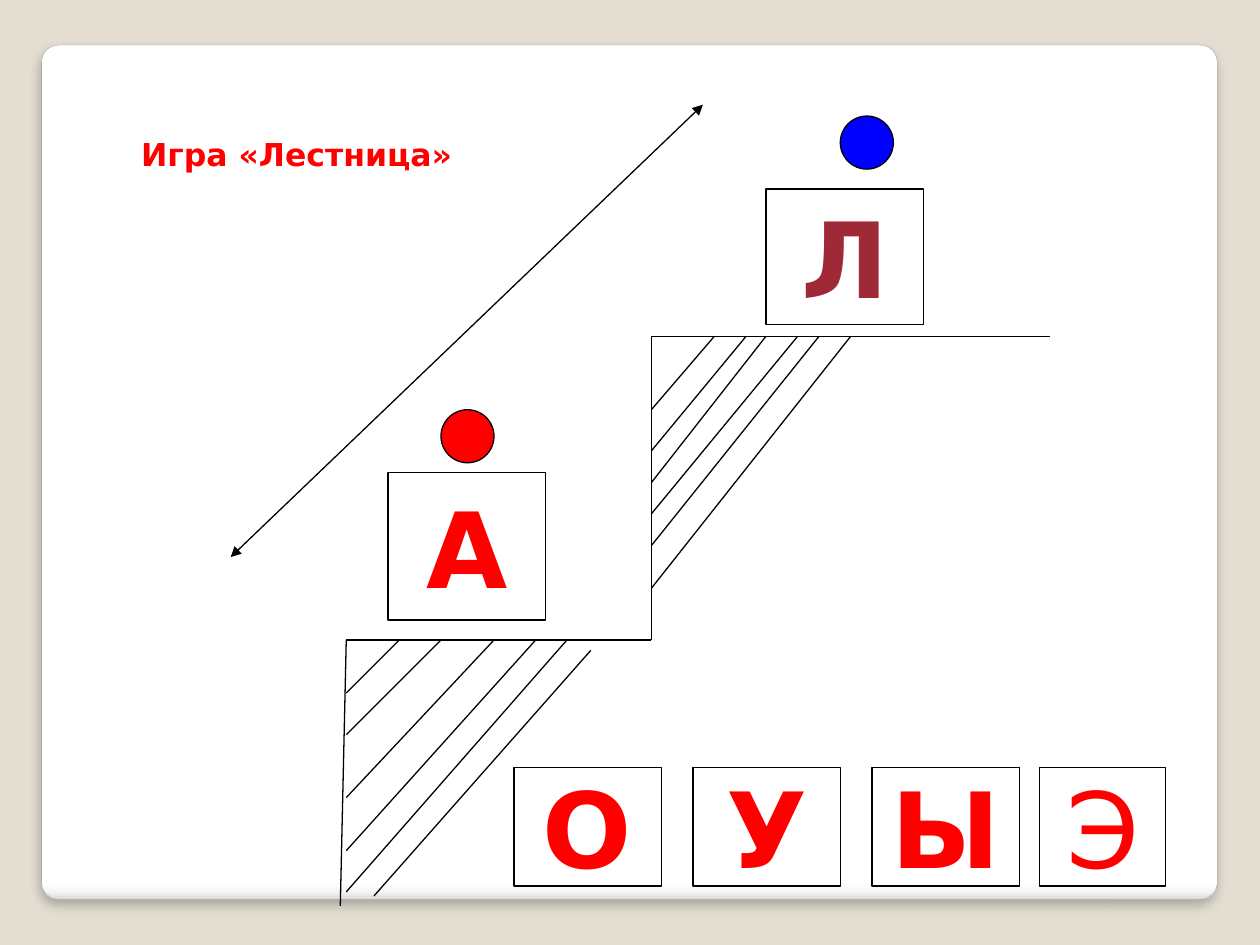
from lxml.etree import SubElement
from pptx import Presentation
from pptx.dml.color import RGBColor
from pptx.enum.shapes import MSO_CONNECTOR, MSO_SHAPE
from pptx.enum.text import MSO_ANCHOR, MSO_AUTO_SIZE, PP_ALIGN
from pptx.oxml.ns import qn
from pptx.util import Cm, Pt

COLORS = {
    "backdrop": "E3DED1", "white": "FFFFFF", "black": "000000",
    "edge": "A4A4A4", "red": "FF0000", "blue": "0000FF", "maroon": "9F2936",
}
PANEL_STOPS = [(0, "FFFFFF"), (98, "FFFFFF"), (99, "F7F7F7"), (100, "DADADA")]
FONT = "DejaVu Sans"

LOW_X, HIGH_X, END_X = 6.98, 13.13, 21.16
LOW_Y, HIGH_Y = 12.9, 6.78
# Each hatch line joins a point on the tread (x) to one on the riser (y).
LOW_HATCH = [(8.05, 13.97), (8.89, 14.81), (9.96, 16.08), (10.8, 17.15), (11.43, 17.98)]
HIGH_HATCH = [(14.4, 8.26), (15.04, 9.09), (15.44, 9.73), (16.08, 10.36),
              (16.51, 11), (17.15, 11.86)]


def rgb(name):
    return RGBColor.from_string(COLORS[name])


def add_outlined(slide, preset, box, fill="white", edge="black", width=0.75):
    shape = slide.shapes.add_shape(preset, *map(Cm, box))
    shape.shadow.inherit = False
    shape.fill.solid()
    shape.fill.fore_color.rgb = rgb(fill)
    shape.line.color.rgb = rgb(edge)
    shape.line.width = Pt(width)
    return shape


def add_panel(slide):
    """Rounded white sheet with a darkening lower rim and a soft shadow."""
    panel = add_outlined(slide, MSO_SHAPE.ROUNDED_RECTANGLE,
                         (0.84, 0.91, 23.7, 17.22), edge="edge", width=0.16)
    panel.adjustments[0] = 0.02
    panel.fill.gradient()
    properties = panel._element.spPr
    stops = properties.find(".//" + qn("a:gsLst"))
    for stop in list(stops):
        stops.remove(stop)
    for percent, color in PANEL_STOPS:
        stop = SubElement(stops, qn("a:gs"), pos=str(percent * 1000))
        SubElement(stop, qn("a:srgbClr"), val=color)
    properties.find(".//" + qn("a:lin")).set("ang", "5400000")
    shadow = SubElement(properties.find(qn("a:effectLst")), qn("a:outerShdw"),
                        blurRad=str(Pt(6)), dist=str(Pt(4)), dir="5400000", rotWithShape="0")
    shade = SubElement(shadow, qn("a:srgbClr"), val=COLORS["black"])
    SubElement(shade, qn("a:alpha"), val="25000")


def add_line(slide, start, end, arrows=False):
    line = slide.shapes.add_connector(MSO_CONNECTOR.STRAIGHT, *map(Cm, (*start, *end)))
    line.line.color.rgb = rgb("black")
    line.line.width = Pt(0.75)
    if arrows:
        for tag in ("a:headEnd", "a:tailEnd"):
            SubElement(line.line._get_or_add_ln(), qn(tag), type="triangle")
    SubElement(line._element.spPr, qn("a:effectLst"))


def add_run(paragraph, text, size, color, bold=True):
    run = paragraph.add_run()
    run.text = text
    run.font.name = FONT
    run.font.size = Pt(size)
    run.font.bold = bold
    run.font.color.rgb = rgb(color)


def add_letter_card(slide, letter, box, color="red", bold=True):
    frame = add_outlined(slide, MSO_SHAPE.RECTANGLE, box).text_frame
    frame.word_wrap = False
    frame.vertical_anchor = MSO_ANCHOR.MIDDLE
    frame.paragraphs[0].alignment = PP_ALIGN.CENTER
    add_run(frame.paragraphs[0], letter, 60, color, bold)


def add_staircase(slide):
    corners = [(6.86, 18.26), (LOW_X, LOW_Y), (HIGH_X, LOW_Y),
               (HIGH_X, HIGH_Y), (END_X, HIGH_Y)]
    for start, end in zip(corners, corners[1:]):
        add_line(slide, start, end)
    for riser_x, tread_y, hatch in ((LOW_X, LOW_Y, LOW_HATCH), (HIGH_X, HIGH_Y, HIGH_HATCH)):
        for tread_x, riser_y in hatch:
            add_line(slide, (tread_x, tread_y), (riser_x, riser_y))
    add_line(slide, (11.91, 13.11), (7.54, 18.06))


def set_title(slide, text):
    title = slide.shapes.title
    title.left, title.top, title.width, title.height = map(Cm, (2.59, 2.59, 8.94, 1.02))
    frame = title.text_frame
    frame.word_wrap = True
    frame.auto_size = MSO_AUTO_SIZE.NONE
    frame.vertical_anchor = MSO_ANCHOR.TOP
    frame.paragraphs[0].alignment = PP_ALIGN.LEFT
    add_run(frame.paragraphs[0], text, 18, "red")
    slide.shapes._spTree.append(title._element)  # bring in front of the panel


def main():
    deck = Presentation()
    deck.slide_width, deck.slide_height = Cm(25.4), Cm(19.05)
    slide = deck.slides.add_slide(deck.slide_layouts[5])
    slide.background.fill.solid()
    slide.background.fill.fore_color.rgb = rgb("backdrop")

    add_panel(slide)
    add_staircase(slide)
    add_letter_card(slide, "Л", (15.44, 3.81, 3.18, 2.74), "maroon")
    add_letter_card(slide, "А", (7.82, 9.53, 3.18, 2.97))
    for column, vowel in enumerate("ОУЫ"):
        add_letter_card(slide, vowel, (10.36 + 3.61 * column, 15.47, 2.97, 2.39))
    add_letter_card(slide, "Э", (20.96, 15.47, 2.54, 2.39), bold=False)
    add_line(slide, (14.17, 2.11), (4.65, 11.23), arrows=True)
    for left, top, color in ((16.94, 2.34, "blue"), (8.89, 8.26, "red")):
        add_outlined(slide, MSO_SHAPE.OVAL, (left, top, 1.07, 1.07), color)
    set_title(slide, "Игра «Лестница»")

    deck.save("out.pptx")


if __name__ == "__main__":
    main()
